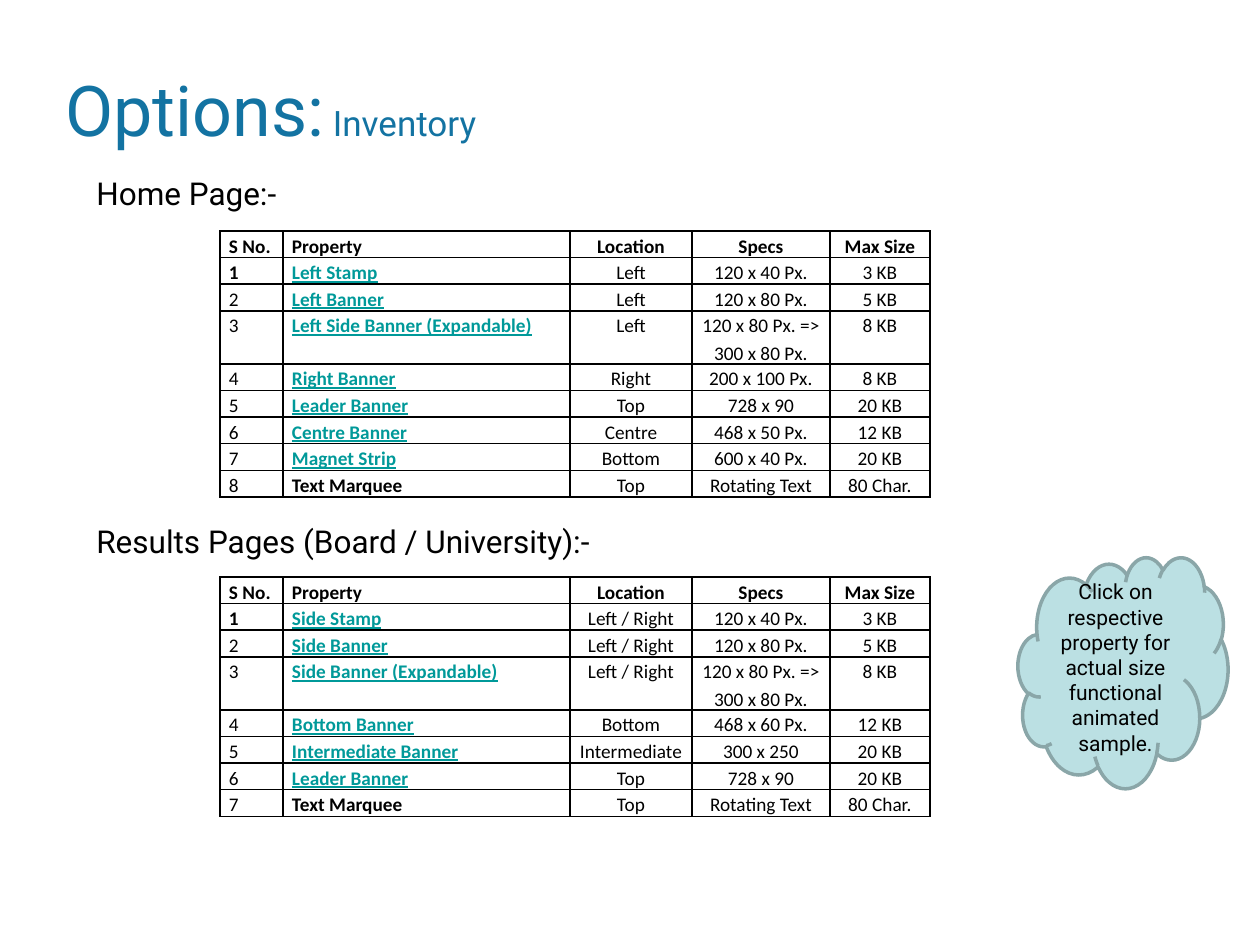
from lxml import etree
from pptx import Presentation, util as u
from pptx.dml.color import RGBColor
from pptx.enum import shapes, text
from pptx.oxml.ns import qn

COLORS = {"title": "1373A2", "text": "000000", "link": "009999",
          "cloud": "BBE0E3", "cloud_line": "8AA6A8"}
HEADER = ("S No.", "Property", "Location", "Specs", "Max Size")
EXPANDABLE = "120 x 80 Px. => 300 x 80 Px."
MARQUEE = ("Text Marquee", "Top", "Rotating Text", "80 Char.")
SECTIONS = [
    {"heading": "Home Page:-", "box": (84, 168, 213, 50), "top": 231, "rows": [
        ("Left Stamp", "Left", "120 x 40 Px.", "3 KB"),
        ("Left Banner", "Left", "120 x 80 Px.", "5 KB"),
        ("Left Side Banner (Expandable)", "Left", EXPANDABLE, "8 KB"),
        ("Right Banner", "Right", "200 x 100 Px.", "8 KB"),
        ("Leader Banner", "Top", "728 x 90", "20 KB"),
        ("Centre Banner", "Centre", "468 x 50 Px.", "12 KB"),
        ("Magnet Strip", "Bottom", "600 x 40 Px.", "20 KB"),
        MARQUEE]},
    {"heading": "Results Pages (Board / University):-", "box": (84, 516, 539, 50),
     "top": 577, "rows": [
        ("Side Stamp", "Left / Right", "120 x 40 Px.", "3 KB"),
        ("Side Banner", "Left / Right", "120 x 80 Px.", "5 KB"),
        ("Side Banner (Expandable)", "Left / Right", EXPANDABLE, "8 KB"),
        ("Bottom Banner", "Bottom", "468 x 60 Px.", "12 KB"),
        ("Intermediate Banner", "Intermediate", "300 x 250", "20 KB"),
        ("Leader Banner", "Top", "728 x 90", "20 KB"),
        MARQUEE]},
]
TIP = "Click on respective property for actual size functional animated sample."
COL_WIDTHS = (63, 287, 122, 138, 100)
TABLE_LEFT = 220


def px(n):
    return u.Emu(n * 914400 // 126)


LINE_HEIGHT = px(266) // 10


def add_text(p, words, size=12, font="Roboto", color="text", bold=False,
             underline=False, align=text.PP_ALIGN.LEFT, spacing=None):
    p.alignment = align
    if spacing:
        p.line_spacing = spacing
    r = p.add_run()
    r.text = words
    f = r.font
    f.size, f.name, f.bold, f.underline = u.Pt(size), font, bold, underline
    f.color.rgb = RGBColor.from_string(COLORS[color])


def add_box(s, box, wrap=True):
    tf = s.shapes.add_textbox(*map(px, box)).text_frame
    tf.word_wrap = wrap
    return tf.paragraphs[0]


def set_borders(cell):
    tc_pr = cell._tc.get_or_add_tcPr()
    for i, side in enumerate(("lnL", "lnR", "lnT", "lnB")):
        ln = etree.Element(qn(f"a:{side}"), w=str(u.Pt(1)))
        fill = etree.SubElement(ln, qn("a:solidFill"))
        etree.SubElement(fill, qn("a:srgbClr"), val=COLORS["text"])
        tc_pr.insert(i, ln)


def fill_cell(cell, words, row, col):
    cell.fill.background()
    set_borders(cell)
    cell.margin_left = cell.margin_right = px(9)
    cell.margin_top = cell.margin_bottom = 0
    if col < 2:
        if row not in (0, 1, 3):
            cell.vertical_anchor = text.MSO_ANCHOR.BOTTOM
        elif col == 1 and row < 2:
            cell.vertical_anchor = text.MSO_ANCHOR.MIDDLE
    link = col == 1 and row > 0 and words != MARQUEE[0]
    add_text(cell.text_frame.paragraphs[0], words, size=11, font="Calibri",
             color="link" if link else "text", underline=link,
             bold=row == 0 or col == 1 or (row, col) == (1, 0),
             align=text.PP_ALIGN.LEFT if col < 2 else text.PP_ALIGN.CENTER,
             spacing=1.15)


def add_inventory(s, top, rows):
    grid = [HEADER] + [(str(n), *row) for n, row in enumerate(rows, 1)]
    heights = [LINE_HEIGHT * (2 if EXPANDABLE in row else 1) for row in grid]
    frame = s.shapes.add_table(len(grid), len(HEADER), px(TABLE_LEFT), px(top),
                               px(sum(COL_WIDTHS)), sum(heights))
    table = frame.table
    table.first_row = table.horz_banding = False
    for column, width in zip(table.columns, COL_WIDTHS):
        column.width = px(width)
    for i, row in enumerate(grid):
        table.rows[i].height = heights[i]
        for j, words in enumerate(row):
            fill_cell(table.cell(i, j), words, i, j)


def add_cloud(s):
    sp = s.shapes.add_shape(shapes.MSO_SHAPE.CLOUD, *map(px, (1018, 557, 210, 231)))
    sp.shadow.inherit = False
    sp.fill.solid()
    sp.fill.fore_color.rgb = RGBColor.from_string(COLORS["cloud"])
    sp.line.color.rgb = RGBColor.from_string(COLORS["cloud_line"])
    sp.line.width = u.Pt(2)
    tf = sp.text_frame
    tf.word_wrap = True
    tf.vertical_anchor = text.MSO_ANCHOR.MIDDLE
    add_text(tf.paragraphs[0], TIP, align=text.PP_ALIGN.CENTER)


def main():
    prs = Presentation()
    prs.slide_width, prs.slide_height = px(1260), px(945)
    s = prs.slides.add_slide(prs.slide_layouts[6])
    title = add_box(s, (53, 60, 693, 97))
    add_text(title, "Options:", size=40, color="title")
    add_text(title, " Inventory", size=20, color="title")
    for section in SECTIONS:
        add_text(add_box(s, section["box"], wrap=False), section["heading"], size=18)
        add_inventory(s, section["top"], section["rows"])
    add_cloud(s)
    prs.save("out.pptx")


if __name__ == "__main__":
    main()
